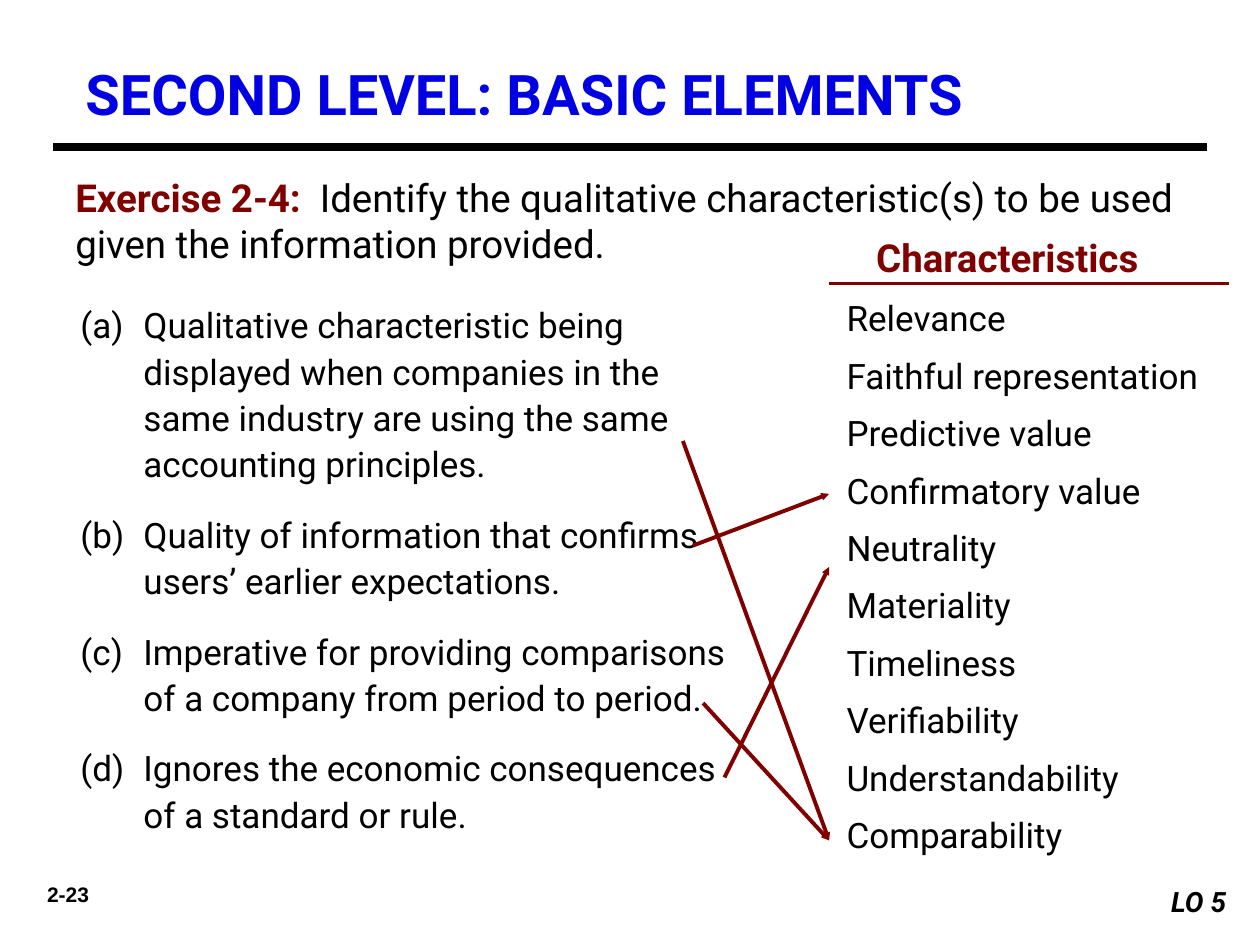
from dataclasses import dataclass
from pptx import Presentation
from pptx.dml.color import RGBColor as RGB
from pptx.enum.shapes import MSO_CONNECTOR as Link, MSO_SHAPE as Shape
from pptx.enum.text import MSO_ANCHOR as Anchor, PP_ALIGN as Align
from pptx.oxml.ns import qn
from pptx.util import Inches, Pt
from lxml.etree import SubElement as Sub


@dataclass(frozen=True)
class Theme:
    font: str = "Roboto"
    plain: str = "Arial"
    ink: RGB = RGB(0, 0, 0)
    paper: RGB = RGB(255, 255, 255)
    blue: RGB = RGB(0, 0, 0xE2)
    red: RGB = RGB(0x80, 0, 0)
    title: int = 32
    lead: int = 22
    body: int = 20
    tag: int = 16
    page: int = 12


T = Theme()

CASES = [
    "Qualitative characteristic being displayed when companies in the same"
    " industry are using the same accounting principles.",
    "Quality of information that confirms users’ earlier expectations.",
    "Imperative for providing comparisons of a company from period to period.",
    "Ignores the economic consequences of a standard or rule.",
]
TRAITS = [
    "Relevance", "Faithful representation", "Predictive value",
    "Confirmatory value", "Neutrality", "Materiality", "Timeliness",
    "Verifiability", "Understandability", "Comparability",
]
MATCHES = [
    ((5.42, 3.5), (6.58, 6.67)),
    ((5.58, 5.58), (6.58, 6.67)),
    ((5.5, 4.33), (6.58, 3.92)),
    ((5.75, 6.17), (6.58, 4.5)),
]


def add_run(para, text, size, color=T.ink, bold=False, italic=False, face=T.font):
    run = para.add_run()
    run.text = text
    font = run.font
    font.name, font.size = face, Pt(size)
    font.bold, font.italic = bold, italic
    font.color.rgb = color


def add_box(slide, box, wrap=True):
    frame = slide.shapes.add_textbox(*map(Inches, box)).text_frame
    frame.word_wrap = wrap
    return frame


def add_line(slide, start, end, color, width, arrow=False):
    line = slide.shapes.add_connector(Link.STRAIGHT, *map(Inches, start + end))
    line.line.color.rgb = color
    line.line.width = Pt(width)
    if arrow:
        Sub(line.line._get_or_add_ln(), qn("a:tailEnd"),
            type="triangle", w="sm", len="sm")
    Sub(line._element.spPr, qn("a:effectLst"))


def set_indent(para, left, first):
    props = para._p.get_or_add_pPr()
    props.set("marL", str(Inches(left)))
    props.set("indent", str(Inches(first)))
    return props


def add_list(slide, box, items, spacing, before=0, number=None):
    frame = add_box(slide, box)
    for i, item in enumerate(items):
        para = frame.add_paragraph() if i else frame.paragraphs[0]
        para.line_spacing = spacing
        para.space_before = Pt(before if i else 0)
        para.space_after = Pt(T.body * 0.2)
        if number:
            props = set_indent(para, 0.62, -0.5)
            Sub(props, qn("a:buFont"), typeface=T.font)
            Sub(props, qn("a:buAutoNum"), type=number)
        else:
            set_indent(para, 0.62, -0.5)
        add_run(para, item, T.body)


def add_title(slide, box):
    left, top, width, height = box
    frame = add_box(slide, (left + 0.16, top, 9, 0.61))
    add_run(frame.paragraphs[0], "SECOND LEVEL: BASIC ELEMENTS",
            T.title, T.blue, bold=True)
    base = top + height
    add_line(slide, (left, base), (left + width, base), T.ink, 4.5)


def add_task(slide, box):
    para = add_box(slide, box).paragraphs[0]
    add_run(para, "Exercise 2-4:", T.lead, T.red, bold=True)
    add_run(para, "  Identify the qualitative characteristic(s) to be used"
            " given the information provided.", T.lead)


def add_traits(slide, box):
    left, top, width, height = box
    frame = add_box(slide, (left + 0.08, top, 2.83, 0.42), wrap=False)
    frame.vertical_anchor = Anchor.MIDDLE
    para = frame.paragraphs[0]
    para.alignment = Align.CENTER
    add_run(para, "Characteristics", T.lead, T.red, bold=True)
    rule = top + 0.42
    add_line(slide, (left + 0.08, rule), (left + width, rule), T.red, 2.25)
    add_list(slide, (left, rule - 0.01, width, height - 0.41), TRAITS, 1.2)


def add_footer(slide, box):
    left, top, width, height = box
    para = add_box(slide, (left, top, 0.92, 0.3)).paragraphs[0]
    para.alignment = Align.CENTER
    add_run(para, "2-23", T.page, bold=True, face=T.plain)
    spot = (left + width - 1.25, top + 0.02, 1.25, height - 0.02)
    tag = slide.shapes.add_shape(Shape.RECTANGLE, *map(Inches, spot))
    tag.shadow.inherit = False
    tag.fill.solid()
    tag.fill.fore_color.rgb = T.paper
    tag.line.fill.background()
    tag.text_frame.vertical_anchor = Anchor.TOP
    para = tag.text_frame.paragraphs[0]
    para.alignment = Align.RIGHT
    set_indent(para, 0.5, -0.5)
    add_run(para, "LO 5", T.tag, bold=True, italic=True)


def main():
    deck = Presentation()
    deck.slide_width, deck.slide_height = Inches(10), Inches(7.5)
    slide = deck.slides.add_slide(deck.slide_layouts[6])
    add_title(slide, (0.42, 0.42, 9.16, 0.75))
    add_task(slide, (0.5, 1.33, 9.33, 0.83))
    add_list(slide, (0.42, 2.33, 5.58, 4.51), CASES, 1.1,
             before=T.body * 0.5, number="alphaLcParenBoth")
    add_traits(slide, (6.5, 1.83, 3.25, 5.16))
    for start, end in MATCHES:
        add_line(slide, start, end, T.red, 2.25, arrow=True)
    add_footer(slide, (0.08, 6.95, 9.75, 0.39))
    deck.save("out.pptx")


if __name__ == "__main__":
    main()
